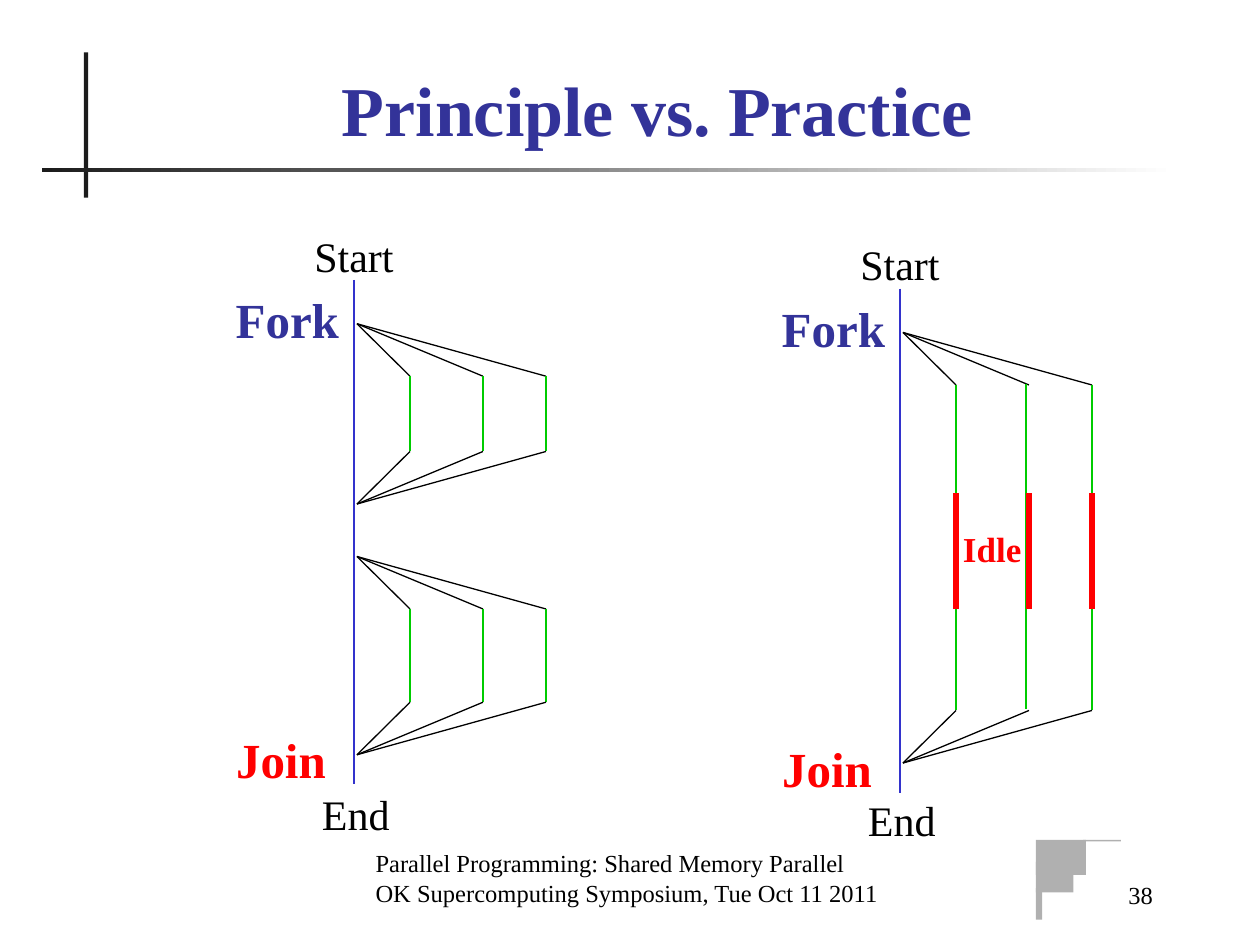
from pptx import Presentation
from pptx.dml.color import RGBColor
from pptx.enum.shapes import MSO_CONNECTOR as CONN, MSO_SHAPE as SHAPE
from pptx.enum.text import MSO_ANCHOR as ANCHOR, MSO_AUTO_SIZE as AUTO, PP_ALIGN as ALIGN
from pptx.oxml.ns import qn
from pptx.util import Pt
from lxml.etree import SubElement


def rgb(color):
    return RGBColor.from_string(color)


def add_text(box, lines, size, color="000000", bold=False, align=ALIGN.LEFT, wrap=False):
    tb = s.shapes.add_textbox(*[Pt(v) for v in box])
    tf = tb.text_frame
    tf.word_wrap = wrap
    tf.auto_size = AUTO.NONE if wrap else AUTO.SHAPE_TO_FIT_TEXT
    tf.vertical_anchor = ANCHOR.BOTTOM if wrap else ANCHOR.TOP
    for i, line in enumerate(lines):
        p = tf.add_paragraph() if i else tf.paragraphs[0]
        p.alignment = align
        r = p.add_run()
        r.text = line
        r.font.name = "Times New Roman"
        r.font.size = Pt(size)
        r.font.bold = bold
        r.font.color.rgb = rgb(color)


prs = Presentation()
prs.slide_width, prs.slide_height = Pt(720), Pt(540)
s = prs.slides.add_slide(prs.slide_layouts[6])

BLUE, RED, GREEN, BLACK, GRAY = "333399", "FF0000", "00CC00", "000000", "B0B0B0"

bars = [
    (48, 30, 2.4, 83, "1C1C1C"),
    (24, 96, 648, 2.4, None),
    (592, 480, 28.5, 20, GRAY),
    (592, 492.5, 21.5, 17.5, GRAY),
    (592, 507.5, 3.5, 18, GRAY),
    (619, 480, 21.5, 0.8, GRAY),
]
for x, y, w, h, color in bars:
    sp = s.shapes.add_shape(SHAPE.RECTANGLE, Pt(x), Pt(y), Pt(w), Pt(h))
    sp.shadow.inherit = False
    sp.line.fill.background()
    if color:
        sp.fill.solid()
        sp.fill.fore_color.rgb = rgb(color)
    else:
        sp.fill.gradient()
        sp.fill.gradient_angle = 0
        for stop, end in zip(sp.fill.gradient_stops, ("1C1C1C", "FFFFFF")):
            stop.color.rgb = rgb(end)

add_text((60, 36, 631.5, 53.5), ["Principle vs. Practice"], 40, BLUE, True, ALIGN.CENTER, True)
add_text((207.5, 486, 315, 36),
         ["Parallel Programming: Shared Memory Parallel",
          "OK Supercomputing Symposium, Tue Oct 11 2011"], 14, wrap=True)
add_text((564, 487.5, 102, 36), ["38"], 14, align=ALIGN.RIGHT, wrap=True)

panels = [
    (202.3, 160, 447, [(185, 215, 258, 288), (318, 348, 401.3, 431.3)], (0, 0, 0)),
    (514.3, 165, 450.5, [(190, 220, 406, 436)], (0, -1.7, 0)),
]
lines = []
for x, top, end_y, regions, shifts in panels:
    lines.append((x, top, x, top + 288, "3333CC", 0.75))
    for fork, begin, finish, join in regions:
        for dx, shift in zip((32, 73.7, 109.7), shifts):
            tx = x + dx
            lines.append((x + 1.7, fork, tx, begin, BLACK, 0.75))
            lines.append((tx + shift, begin + shift / 2, tx + shift, finish + shift / 2, GREEN, 0.75))
            lines.append((x + 1.7, join, tx, finish, BLACK, 0.75))
            if len(regions) == 1:
                lines.append((tx, 282, tx, 348, RED, 3))
    add_text((x - 75.5, top + 2, 74, 41), ["Fork"], 28, BLUE, True, ALIGN.RIGHT)
    add_text((x - 75, top + 253.5, 66, 41), ["Join"], 28, RED, True, ALIGN.RIGHT)
    add_text((x - 30, top - 32, 60, 36), ["Start"], 24, align=ALIGN.CENTER)
    add_text((x - 26, end_y, 54, 36), ["End"], 24, align=ALIGN.CENTER)

for x1, y1, x2, y2, color, width in lines:
    c = s.shapes.add_connector(CONN.STRAIGHT, Pt(x1), Pt(y1), Pt(x2), Pt(y2))
    c.line.color.rgb = rgb(color)
    c.line.width = Pt(width)
    SubElement(c._element.spPr, qn("a:effectLst"))

add_text((541, 298, 52, 31), ["Idle"], 20, RED, True, ALIGN.CENTER)

prs.save("out.pptx")
